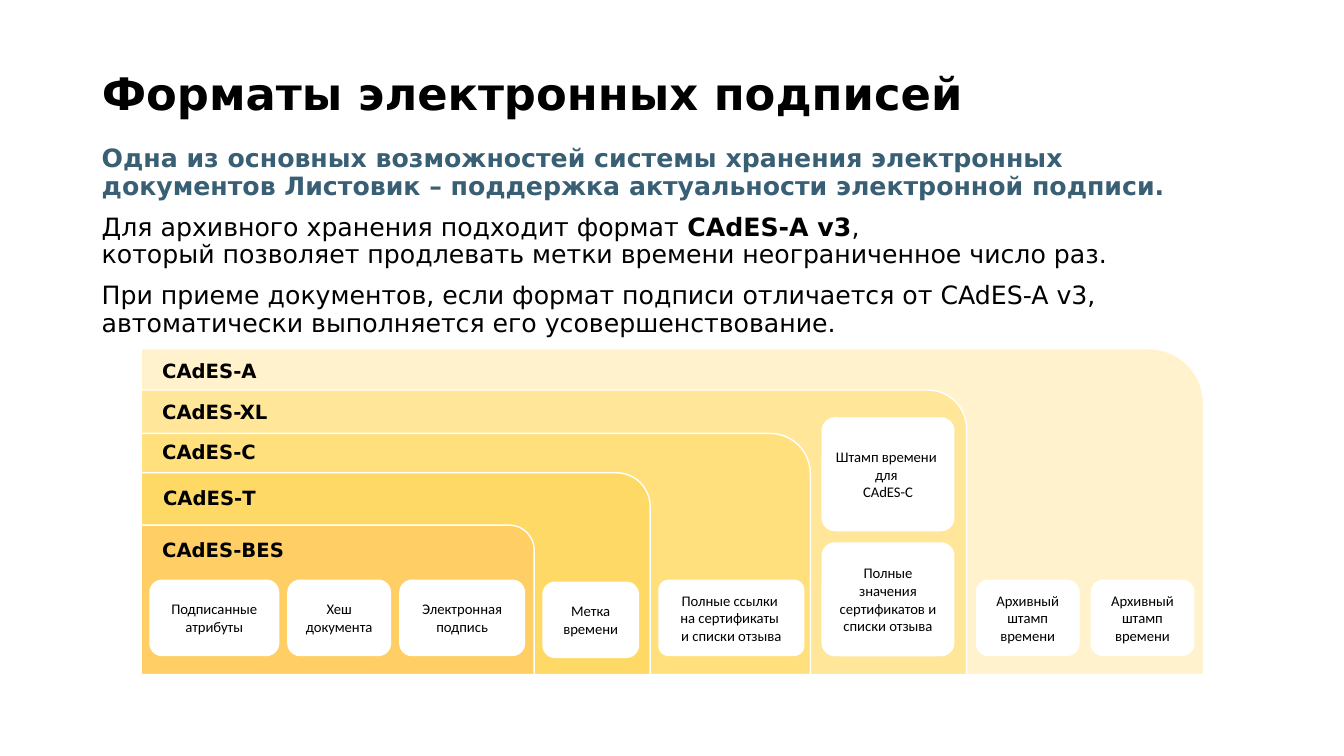
from dataclasses import dataclass

import pptx
import pptx.dml.color
import pptx.enum.shapes
import pptx.enum.text
import pptx.util
from pptx.dml.color import RGBColor
from pptx.enum.shapes import MSO_SHAPE
from pptx.enum.text import MSO_ANCHOR, MSO_AUTO_SIZE, PP_ALIGN

Pt = pptx.util.Pt

BLACK = RGBColor(0x00, 0x00, 0x00)
WHITE = RGBColor(0xFF, 0xFF, 0xFF)
TEAL = RGBColor(0x39, 0x5F, 0x75)

HEADING = "DejaVu Sans"
LAYERS_LEFT, LAYERS_BOTTOM = 100.8, 481.9
LABEL_WIDTH, LABEL_HEIGHT = 113.8, 24.2
CARD_TOP, CARD_HEIGHT = 414, 54.7
TALL_CARD_HEIGHT = 81.4

TITLE_FONT = {"name": HEADING, "size": Pt(32), "bold": True}
BODY_FONT = {"name": HEADING, "size": Pt(18)}
LABEL_FONT = {"name": HEADING, "size": Pt(14), "bold": True}
CARD_FONT = {"name": "Calibri", "size": Pt(10.5)}
NARROW_FRAME = {
    "word_wrap": True,
    "auto_size": MSO_AUTO_SIZE.NONE,
    "margin_left": Pt(2.9),
    "margin_top": Pt(2.9),
    "margin_right": Pt(2.9),
    "margin_bottom": Pt(2.9),
}


@dataclass(frozen=True)
class Layer:
    label: str
    top: float
    width: float
    color: RGBColor
    label_top: float
    label_left: float = 108.7
    corner: float = 0.167


@dataclass(frozen=True)
class Card:
    text: str
    left: float
    width: float
    top: float = CARD_TOP
    height: float = CARD_HEIGHT
    corner: float = 0.167


@dataclass(frozen=True)
class Phrase:
    text: str
    bold: bool = False
    color: RGBColor = BLACK


LAYERS = [
    Layer("CAdES-А", 249.1, 758.9, RGBColor(0xFF, 0xF2, 0xCC), 252.7),
    Layer("CAdES-XL", 278.6, 589.7, RGBColor(0xFF, 0xE6, 0x99), 282.2, corner=0.137),
    Layer("CAdES-C", 309.6, 478.1, RGBColor(0xFF, 0xE0, 0x7D), 311),
    Layer("CAdES-Т", 337.7, 363.6, RGBColor(0xFF, 0xD9, 0x66), 343.4, 109.4),
    Layer("CAdES-BES", 375.1, 280.8, RGBColor(0xFF, 0xCF, 0x66), 380.9),
]

CARDS = [
    Card("Подписанные атрибуты", 106.6, 92.9),
    Card("Хеш документа", 205.2, 74.2),
    Card("Электронная подпись", 285.1, 90),
    Card("Метка времени", 387.4, 69.1, top=415.4),
    Card("Полные ссылки \vна сертификаты \vи списки отзыва", 470.2, 104.4, corner=0.138),
    Card("Архивный штамп времени", 697, 74.2),
    Card("Архивный штамп времени", 779, 74.2),
    Card("Штамп времени \vдля \vCAdES-C", 586.8, 95, 298.1, TALL_CARD_HEIGHT, 0.118),
    Card("Полные значения сертификатов и списки отзыва", 586.8, 95, 387.4,
         TALL_CARD_HEIGHT, 0.118),
]

INTRODUCTION = [
    [Phrase("Одна из основных возможностей системы хранения электронных документов "
            "Листовик – поддержка актуальности электронной подписи.", True, TEAL)],
    [Phrase("Для архивного хранения подходит формат "),
     Phrase("CAdES-A v3", True),
     Phrase(", \vкоторый позволяет продлевать метки времени неограниченное число раз.")],
    [Phrase("При приеме документов, если формат подписи отличается от CAdES-A v3, "
            "автоматически выполняется его усовершенствование.")],
]


def apply_format(target: object, values: dict) -> None:
    for attribute, value in values.items():
        setattr(target, attribute, value)


def set_font(font: pptx.text.text.Font, values: dict, color: RGBColor = BLACK) -> None:
    apply_format(font, values)
    font.color.rgb = color


def write_title(slide: pptx.slide.Slide) -> None:
    title = slide.shapes.title
    apply_format(title, {"left": Pt(69.8), "top": Pt(49.7),
                         "width": Pt(818.6), "height": Pt(38.9)})
    frame = title.text_frame
    apply_format(frame, NARROW_FRAME | {"vertical_anchor": MSO_ANCHOR.BOTTOM})
    frame.text = "Форматы электронных подписей"
    heading = frame.paragraphs[0]
    apply_format(heading, {"alignment": PP_ALIGN.LEFT, "line_spacing": 0.9})
    set_font(heading.font, TITLE_FONT)


def write_introduction(slide: pptx.slide.Slide) -> None:
    box = slide.shapes.add_textbox(Pt(69.8), Pt(101.5), Pt(818.6), Pt(145.4))
    frame = box.text_frame
    apply_format(frame, NARROW_FRAME)
    for index, phrases in enumerate(INTRODUCTION):
        paragraph = frame.add_paragraph() if index else frame.paragraphs[0]
        apply_format(paragraph, {"line_spacing": 0.9, "space_before": Pt(10 if index else 0)})
        for phrase in phrases:
            # A run has no line break of its own, so each break splits the phrase.
            for part, line in enumerate(phrase.text.split("\v")):
                if part:
                    paragraph.add_line_break()
                run = paragraph.add_run()
                run.text = line
                set_font(run.font, BODY_FONT | {"bold": phrase.bold}, phrase.color)


def draw_layer(slide: pptx.slide.Slide, layer: Layer) -> None:
    shape = slide.shapes.add_shape(
        MSO_SHAPE.ROUND_1_RECTANGLE, Pt(LAYERS_LEFT), Pt(layer.top),
        Pt(layer.width), Pt(LAYERS_BOTTOM - layer.top))
    shape.adjustments[0] = layer.corner
    shape.shadow.inherit = False
    shape.fill.solid()
    shape.fill.fore_color.rgb = layer.color
    shape.line.color.rgb = WHITE
    shape.line.width = Pt(1)


def draw_card(slide: pptx.slide.Slide, card: Card) -> None:
    shape = slide.shapes.add_shape(
        MSO_SHAPE.ROUNDED_RECTANGLE, Pt(card.left), Pt(card.top),
        Pt(card.width), Pt(card.height))
    shape.adjustments[0] = card.corner
    shape.shadow.inherit = False
    shape.fill.solid()
    shape.fill.fore_color.rgb = WHITE
    shape.line.fill.background()
    frame = shape.text_frame
    apply_format(frame, {"word_wrap": True, "vertical_anchor": MSO_ANCHOR.MIDDLE})
    caption = frame.paragraphs[0]
    caption.text = card.text
    caption.alignment = PP_ALIGN.CENTER
    set_font(caption.font, CARD_FONT)


def write_label(slide: pptx.slide.Slide, layer: Layer) -> None:
    box = slide.shapes.add_textbox(Pt(layer.label_left), Pt(layer.label_top),
                                   Pt(LABEL_WIDTH), Pt(LABEL_HEIGHT))
    frame = box.text_frame
    apply_format(frame, {"word_wrap": True, "auto_size": MSO_AUTO_SIZE.SHAPE_TO_FIT_TEXT})
    frame.text = layer.label
    set_font(frame.paragraphs[0].font, LABEL_FONT)


def main() -> None:
    deck = pptx.Presentation()
    apply_format(deck, {"slide_width": Pt(960), "slide_height": Pt(540)})
    slide = deck.slides.add_slide(deck.slide_layouts[5])
    write_title(slide)
    write_introduction(slide)
    for layer in LAYERS:
        draw_layer(slide, layer)
    for card in CARDS:
        draw_card(slide, card)
    for layer in LAYERS:
        write_label(slide, layer)
    deck.save("out.pptx")


if __name__ == "__main__":
    main()
